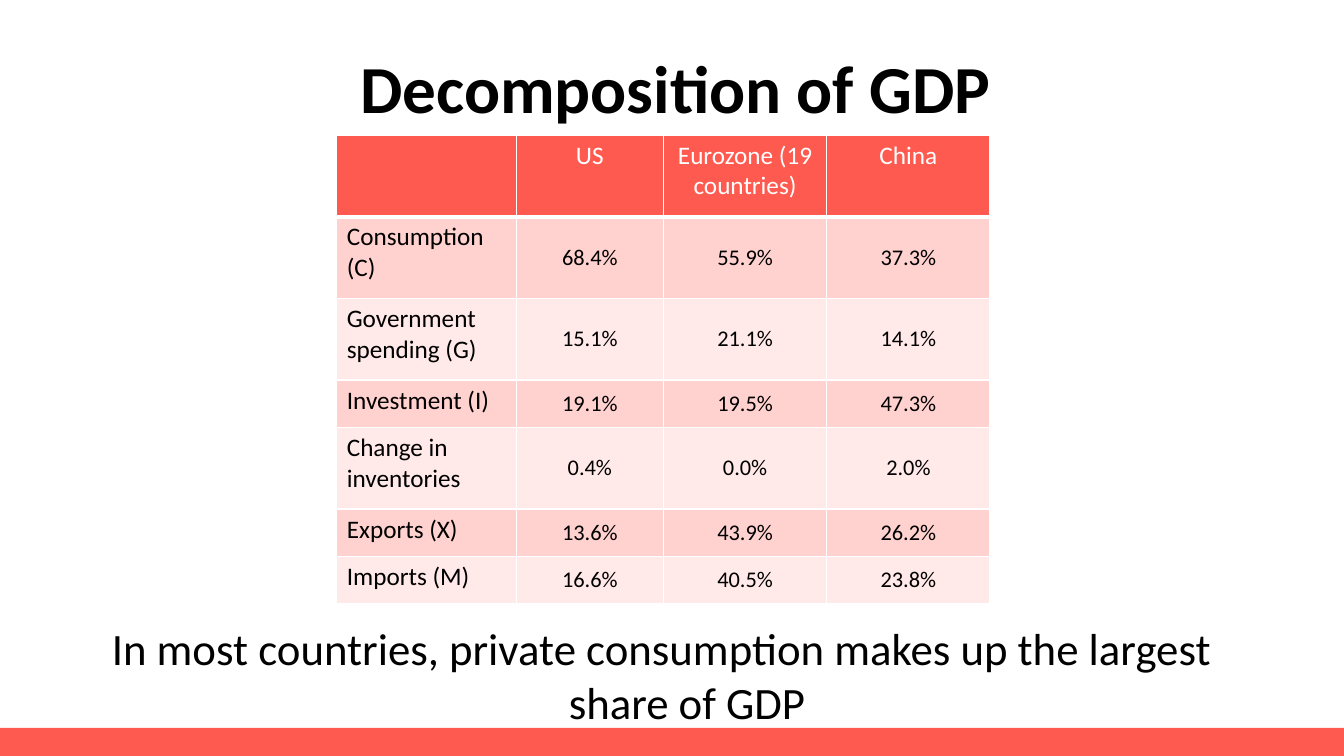
import dataclasses
import typing

import pptx
import pptx.dml.color
import pptx.enum.shapes
import pptx.enum.text
import pptx.oxml
import pptx.oxml.ns
import pptx.util

Inches = pptx.util.Inches
Pt = pptx.util.Pt
RGBColor = pptx.dml.color.RGBColor
PP_ALIGN = pptx.enum.text.PP_ALIGN
MSO_ANCHOR = pptx.enum.text.MSO_ANCHOR

CORAL = RGBColor(0xFF, 0x5A, 0x50)
PINK = RGBColor(0xFF, 0xD2, 0xD0)
PALE_PINK = RGBColor(0xFF, 0xEA, 0xE9)
WHITE = RGBColor(0xFF, 0xFF, 0xFF)
BLACK = RGBColor(0, 0, 0)
FONT = "Calibri"

COLUMN_WIDTHS = (1.78, 1.46, 1.62, 1.62)
TALL_ROW, SHORT_ROW = 0.81, 0.47


@dataclasses.dataclass(frozen=True)
class TableRow:
    height: float
    label: str
    values: tuple[str, str, str]


HEADER = TableRow(TALL_ROW, "", ("US", "Eurozone (19 countries)", "China"))
COMPONENTS = (
    TableRow(TALL_ROW, "Consumption (C)", ("68.4%", "55.9%", "37.3%")),
    TableRow(TALL_ROW, "Government spending (G)", ("15.1%", "21.1%", "14.1%")),
    TableRow(SHORT_ROW, "Investment (I)", ("19.1%", "19.5%", "47.3%")),
    TableRow(TALL_ROW, "Change in inventories", ("0.4%", "0.0%", "2.0%")),
    TableRow(SHORT_ROW, "Exports (X)", ("13.6%", "43.9%", "26.2%")),
    TableRow(SHORT_ROW, "Imports (M)", ("16.6%", "40.5%", "23.8%")),
)


def apply_format(target: typing.Any, values: dict[str, typing.Any]) -> None:
    for name, value in values.items():
        setattr(target, name, value)


def write_text(frame: typing.Any, text: str, size: float, color: RGBColor,
               alignment: PP_ALIGN, bold: bool = False) -> typing.Any:
    para = frame.paragraphs[0]
    para.alignment = alignment
    span = para.add_run()
    span.text = text
    apply_format(span.font, {"name": FONT, "size": Pt(size), "bold": bold})
    span.font.color.rgb = color
    return para


def place(shape: typing.Any, left: float, top: float, width: float, height: float) -> None:
    apply_format(shape, {"left": Inches(left), "top": Inches(top),
                         "width": Inches(width), "height": Inches(height)})


def add_borders(cell: typing.Any, bottom_width: float) -> None:
    """Rule all four sides in white; call before filling the cell."""
    properties = cell._tc.get_or_add_tcPr()
    for side, width in (("L", 1), ("R", 1), ("T", 1), ("B", bottom_width)):
        properties.append(pptx.oxml.parse_xml(
            f'<a:ln{side} {pptx.oxml.ns.nsdecls("a")} w="{Pt(width)}">'
            f'<a:solidFill><a:srgbClr val="{WHITE}"/></a:solidFill></a:ln{side}>'))


def add_footer_band(page: typing.Any) -> None:
    band = page.shapes.add_shape(pptx.enum.shapes.MSO_SHAPE.RECTANGLE, 0,
                                 Inches(7.22), Inches(13.33), Inches(0.28))
    band.shadow.inherit = False
    band.fill.solid()
    band.fill.fore_color.rgb = CORAL
    band.line.fill.background()


def add_title(page: typing.Any) -> None:
    title = page.shapes.title
    place(title, 0.95, 0.4, 11.5, 1.02)
    title.text_frame.vertical_anchor = MSO_ANCHOR.MIDDLE
    para = write_text(title.text_frame, "Decomposition of GDP", 48, BLACK,
                      PP_ALIGN.CENTER, bold=True)
    para.line_spacing = 0.9


def add_takeaway(page: typing.Any) -> None:
    box = page.shapes.add_textbox(Inches(0.51), Inches(6.11), Inches(12.11), Inches(1.18))
    apply_format(box.text_frame, {
        "word_wrap": True,
        "auto_size": pptx.enum.text.MSO_AUTO_SIZE.SHAPE_TO_FIT_TEXT})
    para = write_text(
        box.text_frame,
        "In most countries, private consumption makes up the largest share of GDP",
        32, BLACK, PP_ALIGN.CENTER)
    para.space_after = Pt(6)
    indent = Inches(0.5)
    para_properties = para._p.get_or_add_pPr()
    para_properties.set("marL", str(indent))
    para_properties.set("indent", str(-indent))


def add_gdp_table(page: typing.Any) -> None:
    rows = (HEADER, *COMPONENTS)
    table = page.shapes.add_table(
        len(rows), len(COLUMN_WIDTHS), Inches(3.34), Inches(1.34),
        Inches(sum(COLUMN_WIDTHS)), Inches(sum(row.height for row in rows))).table
    for column, width in zip(table.columns, COLUMN_WIDTHS):
        column.width = Inches(width)
    for row_index, row in enumerate(rows):
        table.rows[row_index].height = Inches(row.height)
        is_header = row is HEADER
        fill = CORAL if is_header else PINK if row_index % 2 else PALE_PINK
        for column_index, text in enumerate((row.label, *row.values)):
            cell = table.cell(row_index, column_index)
            is_value = not is_header and column_index > 0
            add_borders(cell, 3 if is_header else 1)
            cell.fill.solid()
            cell.fill.fore_color.rgb = fill
            if is_value:
                apply_format(cell, {
                    "vertical_anchor": MSO_ANCHOR.MIDDLE, "margin_left": 0,
                    "margin_top": 0, "margin_right": 0, "margin_bottom": 0})
            if text:
                write_text(cell.text_frame, text, 16 if is_value else 18,
                           WHITE if is_header else BLACK,
                           PP_ALIGN.CENTER if column_index else PP_ALIGN.LEFT)


def main() -> None:
    deck = pptx.Presentation()
    apply_format(deck, {"slide_width": Inches(13.33), "slide_height": Inches(7.5)})
    page = deck.slides.add_slide(deck.slide_layouts.get_by_name("Title Only"))
    add_footer_band(page)
    add_title(page)
    add_takeaway(page)
    add_gdp_table(page)
    deck.save("out.pptx")


if __name__ == "__main__":
    main()
